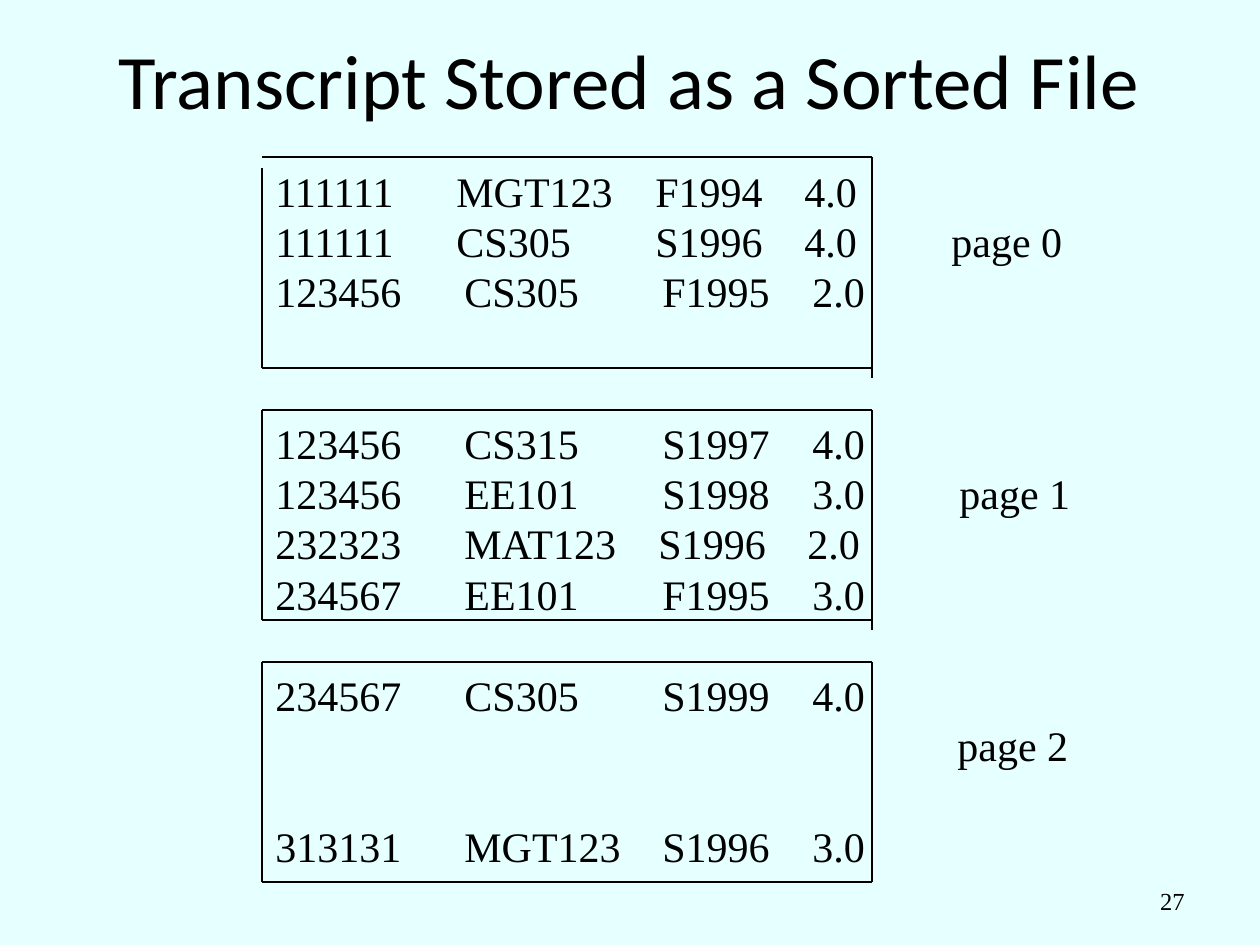
from lxml import etree
from pptx import Presentation
from pptx.dml.color import RGBColor
from pptx.enum.shapes import MSO_CONNECTOR as CONN
from pptx.enum.text import MSO_ANCHOR as ANCHOR, PP_ALIGN as ALIGN
from pptx.oxml.ns import qn
from pptx.util import Inches, Pt

PX = 914400 / 126
SERIF = "Times New Roman"


def rgb(color):
    return RGBColor.from_string(color)


def add_text(tf, text, size=24, font=SERIF, color="000000", align=ALIGN.LEFT,
             spacing=None, before=0, tabs=(), new=False):
    p = tf.add_paragraph() if new else tf.paragraphs[0]
    p.alignment = align
    p.space_before = Pt(before)
    if spacing:
        p.line_spacing = Pt(spacing)
    if tabs:
        tab_list = etree.SubElement(p._p.get_or_add_pPr(), qn("a:tabLst"))
        for pos in tabs:
            etree.SubElement(tab_list, qn("a:tab"), pos=str(round(pos * PX)), algn="l")
    r = p.add_run()
    r.text = text
    r.font.size, r.font.name = Pt(size), font
    r.font.color.rgb = rgb(color)


prs = Presentation()
prs.slide_width, prs.slide_height = Inches(10), Inches(7.5)
s = prs.slides.add_slide(prs.slide_layouts[5])
s.background.fill.solid()
s.background.fill.fore_color.rgb = rgb("E6FFFF")

# Title
title = s.shapes.title
title.left, title.top, title.width, title.height = [
    round(v * PX) for v in (94, 0, 1071, 158)]
title.text_frame.vertical_anchor = ANCHOR.MIDDLE
add_text(title.text_frame, "Transcript Stored as a Sorted File", size=44,
         font="Calibri", align=ALIGN.CENTER)

# Slide number
num = s.shapes.add_textbox(*[round(v * PX) for v in (903, 876, 294, 50)])
num.text_frame.word_wrap = True
num.text_frame.vertical_anchor = ANCHOR.MIDDLE
add_text(num.text_frame, "27", size=14, align=ALIGN.RIGHT)

# Records: skipped lines before the row, tab stops, cells
ROW = 28.8
COLS = (189, 387, 537, 684)
NARROW = (181, 380, 529, 676)
WIDE_COURSE = (189, 383, 532)
PAGE_ONLY = (682,)
rows = [
    (0, NARROW, ("111111", "MGT123", "F1994", "4.0")),
    (0, NARROW, ("111111", "CS305", "S1996", "4.0", "page 0")),
    (0, COLS, ("123456", "CS305", "F1995", "2.0")),
    (2, COLS, ("123456", "CS315", "S1997", "4.0")),
    (0, COLS, ("123456", "EE101", "S1998", "3.0", "page 1")),
    (0, WIDE_COURSE, ("232323", "MAT123", "S1996", "2.0")),
    (0, COLS, ("234567", "EE101", "F1995", "3.0")),
    (1, COLS, ("234567", "CS305", "S1999", "4.0")),
    (0, PAGE_ONLY, ("", "page 2")),
    (1, COLS, ("313131", "MGT123", "S1996", "3.0")),
]
records = s.shapes.add_textbox(*[round(v * PX) for v in (263, 159, 840, 767)])
tf = records.text_frame
tf.word_wrap = True
for i, (skipped, tabs, cells) in enumerate(rows):
    add_text(tf, "\t".join(cells), spacing=ROW, before=skipped * ROW,
             tabs=tabs, new=i > 0)

# Page frames: top, bottom, start of left side, end of right side
LEFT, RIGHT = 262, 872
frames = [(157, 368, 168, 378), (410, 620, 410, 630), (662, 882, 662, 882)]
for top, bottom, left_start, right_end in frames:
    for ends in ((LEFT, top, RIGHT, top), (LEFT, bottom, RIGHT, bottom),
                 (LEFT, left_start, LEFT, bottom), (RIGHT, top, RIGHT, right_end)):
        line = s.shapes.add_connector(CONN.STRAIGHT, *[round(v * PX) for v in ends])
        line.line.color.rgb = rgb("000000")
        line.line.width = Pt(0.75)
        etree.SubElement(line._element.spPr, qn("a:effectLst"))

prs.save("out.pptx")
